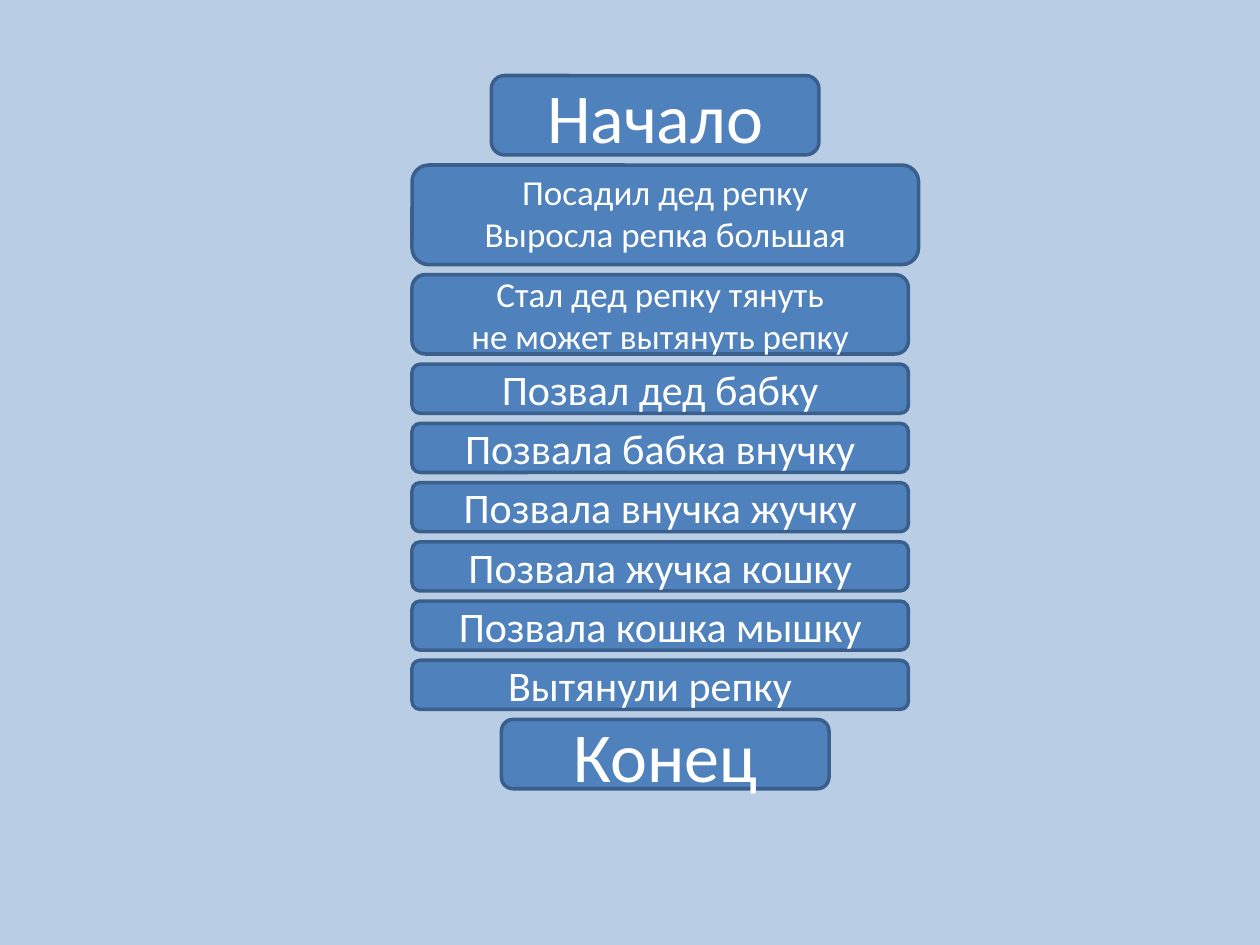
import pptx
import pptx.util
import pptx.dml.color
import pptx.enum.shapes
import pptx.enum.text
from dataclasses import dataclass

Inches, Pt = pptx.util.Inches, pptx.util.Pt
Color = pptx.dml.color.RGBColor.from_string


@dataclass(frozen=True)
class Theme:
    back: str = "B9CDE5"
    fill: str = "4F81BD"
    edge: str = "3A5F8C"
    ink: str = "FFFFFF"
    font: str = "Calibri"
    large: int = 40
    mid: int = 24
    small: int = 20


THEME = Theme()
LEFT, TOP, GAP = 3.27, 0.6, 0.08
WIDE, CAP, ROW = 3.94, 2.6, 0.39
INSET = 0.1, 0.05  # right, bottom

# lines, left, width, height, type size, right and bottom insets
STEPS = [
    (["Начало"], 3.9, CAP, 0.63, THEME.large, INSET),
    (["Посадил дед репку", "Выросла репка большая"],
     LEFT, 4.02, 0.79, THEME.small, (0.1, 0.08)),
    (["Стал дед репку тянуть", "не может вытянуть репку"],
     LEFT, WIDE, 0.63, THEME.small, INSET),
    *[([line], LEFT, WIDE, ROW, THEME.mid, INSET) for line in (
        "Позвал дед бабку",
        "Позвала бабка внучку",
        "Позвала внучка жучку",
        "Позвала жучка кошку",
        "Позвала кошка мышку",
    )],
    (["Вытянули репку"], LEFT, WIDE, ROW, THEME.mid, (0.26, 0.05)),
    (["Конец"], 3.98, CAP, 0.55, THEME.large, INSET),
]


def add_step(slide, top, lines, left, width, height, size, inset):
    box = slide.shapes.add_shape(
        pptx.enum.shapes.MSO_SHAPE.ROUNDED_RECTANGLE,
        *map(Inches, (left, top, width, height)))
    box.shadow.inherit = False
    box.fill.solid()
    box.fill.fore_color.rgb = Color(THEME.fill)
    box.line.color.rgb = Color(THEME.edge)
    box.line.width = Pt(2)
    frame = box.text_frame
    frame.word_wrap = True
    frame.vertical_anchor = pptx.enum.text.MSO_ANCHOR.MIDDLE
    frame.margin_right, frame.margin_bottom = map(Inches, inset)
    frame.text = "\n".join(lines)
    for para in frame.paragraphs:
        para.alignment = pptx.enum.text.PP_ALIGN.CENTER
        para.font.name = THEME.font
        para.font.size = Pt(size)
        para.font.color.rgb = Color(THEME.ink)


def main():
    deck = pptx.Presentation()
    deck.slide_width, deck.slide_height = Inches(10), Inches(7.5)
    slide = deck.slides.add_slide(deck.slide_layouts[6])
    slide.background.fill.solid()
    slide.background.fill.fore_color.rgb = Color(THEME.back)
    top = TOP
    for lines, left, width, height, size, inset in STEPS:
        add_step(slide, top, lines, left, width, height, size, inset)
        top += height + GAP
    deck.save("out.pptx")


if __name__ == "__main__":
    main()
